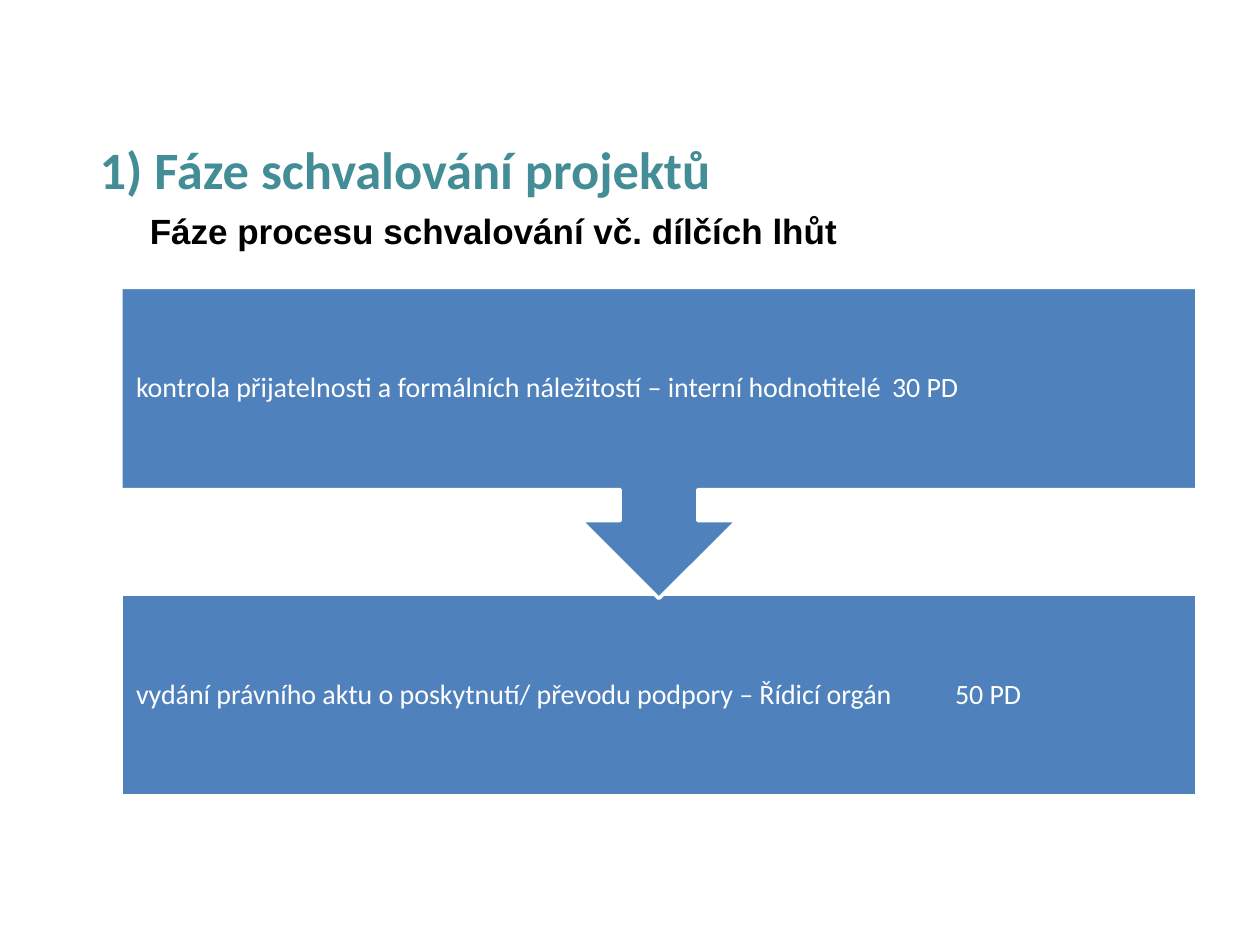
from lxml.etree import SubElement
from pptx import Presentation
from pptx.dml.color import RGBColor
from pptx.enum.shapes import MSO_SHAPE
from pptx.enum.text import MSO_ANCHOR, PP_ALIGN
from pptx.oxml.ns import qn
from pptx.util import Inches, Pt

TITLE = "1) Fáze schvalování projektů"
LEAD = "Fáze procesu schvalování vč. dílčích lhůt"
STEPS = [
    ("kontrola přijatelnosti a formálních náležitostí – interní hodnotitelé", "30 PD"),
    ("vydání právního aktu o poskytnutí/ převodu podpory – Řídicí orgán", "50 PD"),
]
HEX = {"title": "428D96", "text": "000000", "fill": "4F81BD", "white": "FFFFFF"}
LEFT, TOP, WIDE, HIGH = 0.96, 2.28, 8.54, 1.6
PITCH, CALL, TAB = 2.44, 2.47, 7


def color(name):
    return RGBColor.from_string(HEX[name])


def write(box, text, size, tint, font="Calibri", bold=False, align=PP_ALIGN.LEFT,
          anchor=MSO_ANCHOR.MIDDLE, inset=None, left=0, first=0, line=None, tab=None):
    frame = box.text_frame
    frame.word_wrap = True
    frame.vertical_anchor = anchor
    if inset is not None:
        frame.margin_left = frame.margin_right = Inches(inset)
        frame.margin_top = frame.margin_bottom = Inches(inset)
    para = frame.paragraphs[0]
    props = para._p.get_or_add_pPr()
    props.set("marL", str(Inches(left)))
    props.set("indent", str(Inches(first)))
    if tab:
        stops = SubElement(props, qn("a:tabLst"))
        SubElement(stops, qn("a:tab"), pos=str(Inches(tab)), algn="l")
    para.alignment = align
    para.line_spacing = line
    run = para.add_run()
    run.text = text
    run.font.name, run.font.size, run.font.bold = font, Pt(size), bold
    run.font.color.rgb = color(tint)


def block(slide, kind, top, high, turn=0):
    shape = slide.shapes.add_shape(kind, Inches(LEFT), Inches(top), Inches(WIDE), Inches(high))
    shape.rotation = turn
    shape.shadow.inherit = False
    shape.fill.solid()
    shape.fill.fore_color.rgb = color("fill")
    shape.line.color.rgb = color("white")
    shape.line.width = Pt(2)


def main():
    deck = Presentation()
    deck.slide_width, deck.slide_height = Inches(10), Inches(7.5)
    slide = deck.slides.add_slide(deck.slide_layouts[5])

    title = slide.shapes.title
    title.left, title.top, title.width, title.height = map(Inches, (0.69, 0.88, 8.62, 0.98))
    write(title, TITLE, 30, "title", bold=True, left=0.62, first=-0.62, line=0.9)

    lead = slide.shapes.add_textbox(*map(Inches, (0.69, 1.61, 8.62, 0.5)))
    write(lead, LEAD, 20, "text", font="Arial", bold=True, align=PP_ALIGN.JUSTIFY,
          anchor=MSO_ANCHOR.TOP, left=0.4)

    block(slide, MSO_SHAPE.RECTANGLE, TOP + PITCH, HIGH)
    block(slide, MSO_SHAPE.UP_ARROW_CALLOUT, TOP, CALL, turn=180)
    for row, step in enumerate(STEPS):
        label = slide.shapes.add_textbox(
            Inches(LEFT), Inches(TOP + row * PITCH), Inches(WIDE), Inches(HIGH))
        write(label, "\t".join(step), 16, "white", inset=0.12, line=0.9, tab=TAB)

    deck.save("out.pptx")


if __name__ == "__main__":
    main()
